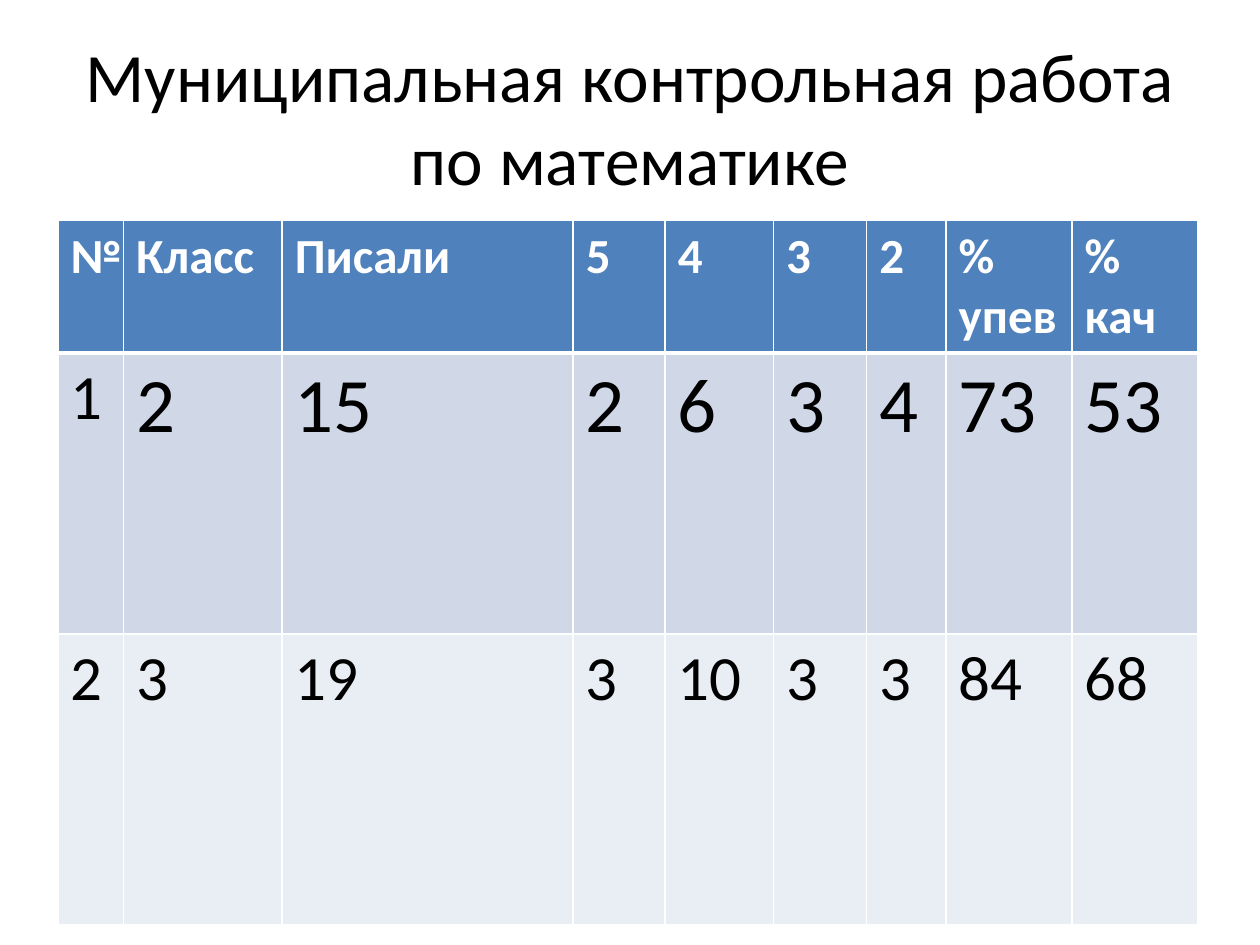
from lxml.etree import SubElement as Sub
from pptx import Presentation
from pptx.dml.color import RGBColor as Rgb
from pptx.enum.text import MSO_ANCHOR as Anchor, MSO_AUTO_SIZE as Fit, PP_ALIGN as Align
from pptx.oxml.ns import qn
from pptx.util import Inches, Pt

HEAD = ["№", "Класс", "Писали", "5", "4", "3", "2", "% упев", "% кач"]
MARKS = [
    ["1", "2", "15", "2", "6", "3", "4", "73", "53"],
    ["2", "3", "19", "3", "10", "3", "3", "84", "68"],
]
COLS = [0.52, 1.26, 2.31, 0.73, 0.86, 0.74, 0.63, 1, 1]
ROWS = [1.04, 2.23, 2.31]
FILLS = ["4F81BD", "D0D8E8", "E9EDF4"]
SIZES = [28, 44, 36]


def paint(code):
    return Rgb.from_string(code)


class Deck:
    font = "Calibri"
    dark = "000000"
    light = "FFFFFF"

    def __init__(self, wide, high):
        self.prs = Presentation()
        self.prs.slide_width = Inches(wide)
        self.prs.slide_height = Inches(high)
        self.slide = self.prs.slides.add_slide(self.prs.slide_layouts[5])

    def add_text(self, par, text, size, color, bold=False):
        run = par.add_run()
        run.text = text
        font = run.font
        font.name, font.size, font.bold = self.font, Pt(size), bold
        font.color.rgb = paint(color)

    def title(self, text, left, top, wide, high):
        box = self.slide.shapes.title
        box.left, box.top = Inches(left), Inches(top)
        box.width, box.height = Inches(wide), Inches(high)
        frame = box.text_frame
        frame.word_wrap = True
        frame.auto_size = Fit.NONE
        frame.vertical_anchor = Anchor.MIDDLE
        par = frame.paragraphs[0]
        par.alignment = Align.CENTER
        self.add_text(par, text, 39.6, self.dark)

    def edge(self, cell, side, width):
        line = Sub(cell._tc.get_or_add_tcPr(), qn(f"a:ln{side}"), w=str(Pt(width)))
        fill = Sub(line, qn("a:solidFill"))
        Sub(fill, qn("a:srgbClr"), val=self.light)

    def table(self, data, left, top):
        frame = self.slide.shapes.add_table(
            len(ROWS), len(COLS), Inches(left), Inches(top),
            Inches(sum(COLS)), Inches(sum(ROWS)))
        grid = frame.table
        for col, wide in zip(grid.columns, COLS):
            col.width = Inches(wide)
        for row, high in zip(grid.rows, ROWS):
            row.height = Inches(high)
        for r, texts in enumerate(data):
            for c, text in enumerate(texts):
                cell = grid.cell(r, c)
                for side in "LRTB":
                    thick = (r, side) in [(0, "B"), (1, "T")]
                    self.edge(cell, side, 3 if thick else 1)
                cell.fill.solid()
                cell.fill.fore_color.rgb = paint(FILLS[r])
                size = 36 if r and c == 0 else SIZES[r]
                color = self.dark if r else self.light
                self.add_text(cell.text_frame.paragraphs[0], text, size, color, r == 0)

    def save(self):
        self.prs.save("out.pptx")


def main():
    deck = Deck(10, 7.5)
    deck.title("Муниципальная контрольная работа по математике", 0.5, 0.3, 9, 1.25)
    deck.table([HEAD] + MARKS, 0.46, 1.75)
    deck.save()


if __name__ == "__main__":
    main()
